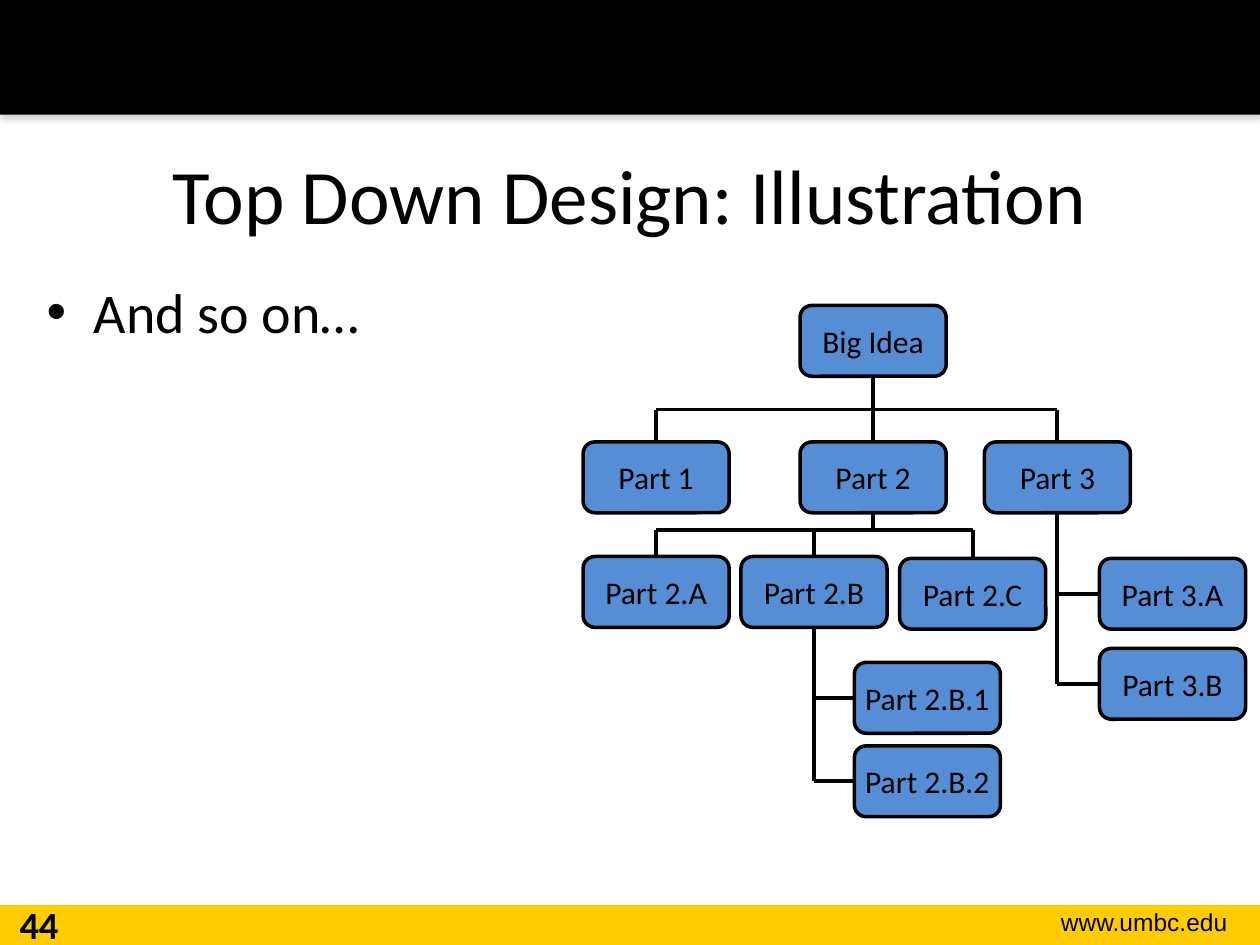
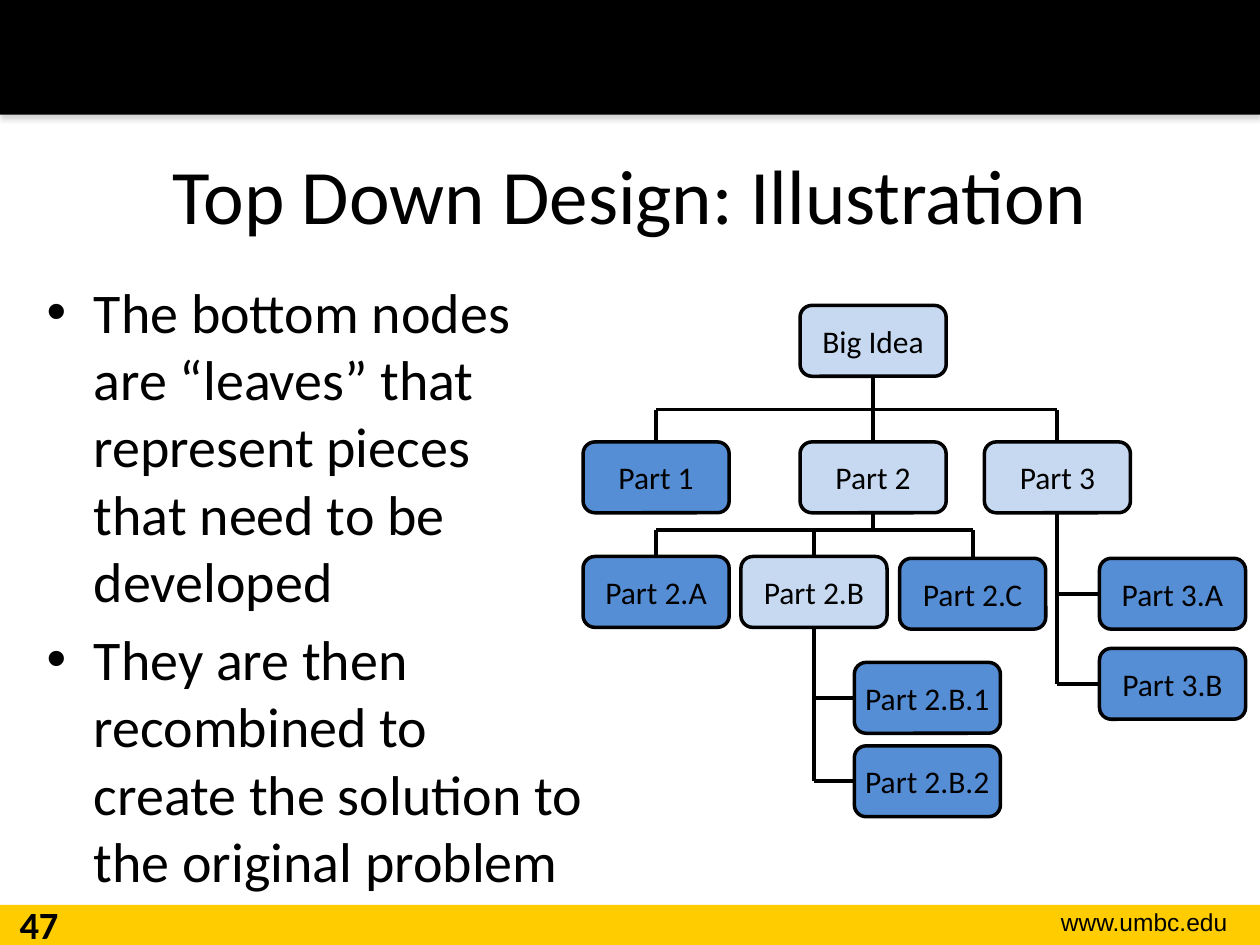
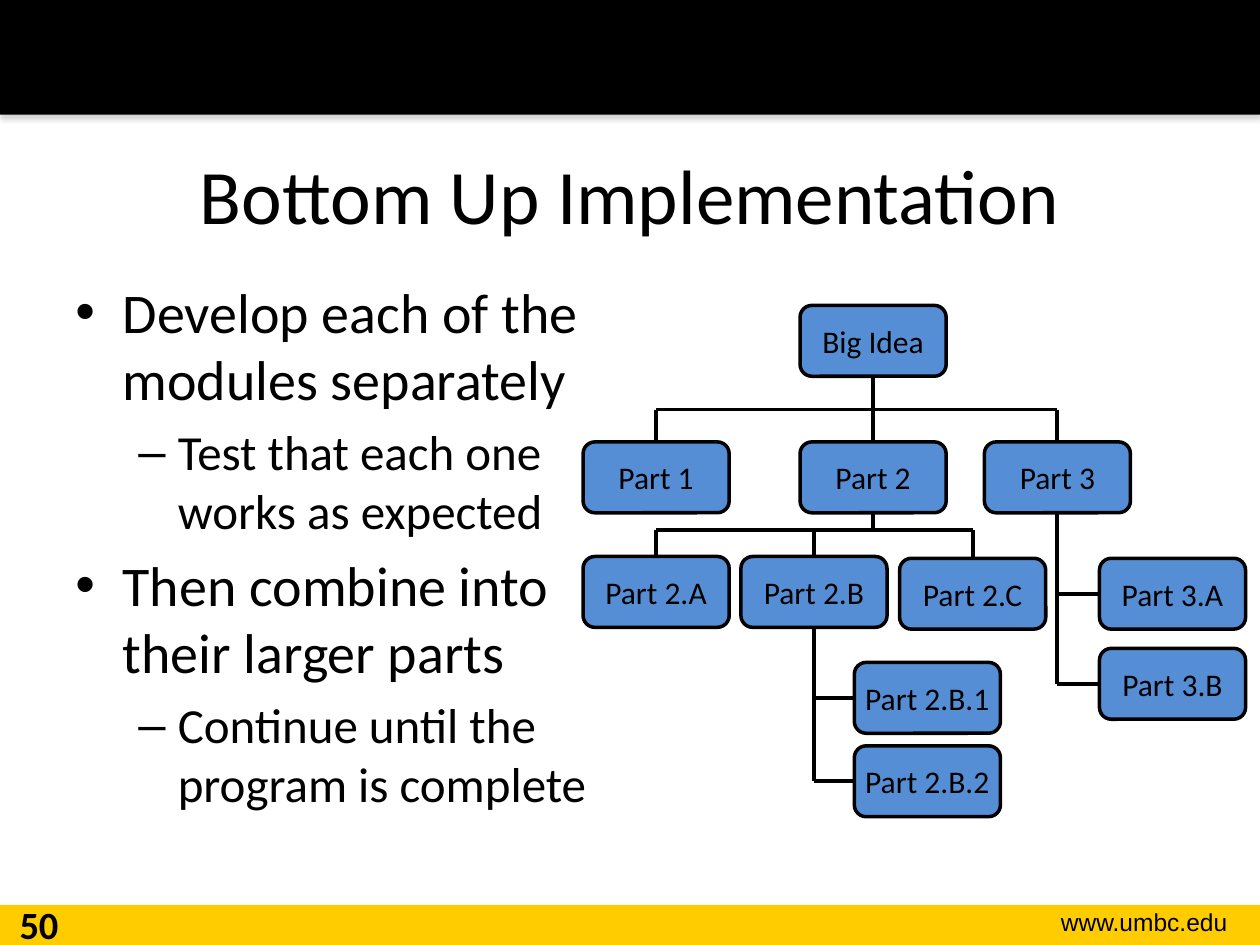
"""Build three slides on top down design and bottom up implementation."""
from lxml import etree
from pptx import Presentation
from pptx.dml.color import RGBColor
from pptx.enum.shapes import MSO_CONNECTOR, MSO_SHAPE
from pptx.enum.text import MSO_ANCHOR, PP_ALIGN
from pptx.oxml import parse_xml
from pptx.oxml.ns import nsdecls, qn
from pptx.util import Pt

LEFT, CENTER, RIGHT = PP_ALIGN.LEFT, PP_ALIGN.CENTER, PP_ALIGN.RIGHT
TOP, MIDDLE = MSO_ANCHOR.TOP, MSO_ANCHOR.MIDDLE
RECT, ROUND = MSO_SHAPE.RECTANGLE, MSO_SHAPE.ROUNDED_RECTANGLE
STRAIGHT = MSO_CONNECTOR.STRAIGHT

BLACK, GOLD, BLUE, PALE = "000000", "FFCC00", "558ED5", "C6D9F1"
SHADOW = (
    f'<a:outerShdw {nsdecls("a")} blurRad="{Pt(3.1)}" dist="{Pt(1.8)}" dir="5400000">'
    '<a:srgbClr val="808080"><a:alpha val="35000"/></a:srgbClr></a:outerShdw>'
)
LEVELS = [(32, 27, 27, "•"), (28, 58.5, 22.5, "–")]

WIDE, HIGH = 83.5, 40.5
NODES = {
    "Big Idea": (457.2, 174.5),
    "Part 1": (333.2, 252.5),
    "Part 2": (457.2, 252.5),
    "Part 3": (562.5, 252.5),
    "Part 2.A": (333.2, 318),
    "Part 2.B": (423.4, 318),
    "Part 2.C": (514.1, 319),
    "Part 3.A": (628.3, 319),
    "Part 3.B": (628.3, 370.5),
    "Part 2.B.1": (488.2, 378.5),
    "Part 2.B.2": (488.2, 426.2),
}
ROWS = [
    ("Big Idea", 234, ["Part 1", "Part 2", "Part 3"]),
    ("Part 2", 303, ["Part 2.A", "Part 2.B", "Part 2.C"]),
]
STACKS = [
    ("Part 3", ["Part 3.A", "Part 3.B"]),
    ("Part 2.B", ["Part 2.B.1", "Part 2.B.2"]),
]
INNER = ["Big Idea", "Part 2", "Part 3", "Part 2.B"]

SLIDES = [
    ("44", "Top Down Design: Illustration", 19.5, 312, [], [(0, "And so on…")]),
    ("47", "Top Down Design: Illustration", 19.5, 325, INNER, [
        (0, "The bottom nodes are “leaves” that represent pieces \vthat need to be developed"),
        (0, "They are then recombined to \vcreate the solution to the original problem"),
    ]),
    ("50", "Bottom Up Implementation", 36, 312, [], [
        (0, "Develop each of the modules separately"),
        (1, "Test that each one works as expected"),
        (0, "Then combine into their larger parts"),
        (1, "Continue until the program is complete"),
    ]),
]


def hue(code):
    return RGBColor.from_string(code)


def write(frame, text, size=18, face="Calibri", bold=False, align=CENTER,
          anchor=TOP, wrap=True, level=None):
    frame.word_wrap = wrap
    frame.vertical_anchor = anchor
    par = frame.paragraphs[0]
    if par.runs:
        par = frame.add_paragraph()
        par.space_before = Pt(size * 0.2)
    par.alignment = align
    if level is not None:
        indent, hang, mark = LEVELS[level][1:]
        props = par._p.get_or_add_pPr()
        props.set("marL", str(Pt(indent)))
        props.set("indent", str(-Pt(hang)))
        etree.SubElement(props, qn("a:buFont")).set("typeface", "Arial")
        etree.SubElement(props, qn("a:buChar")).set("char", mark)
    par.text = text
    for run in par.runs:
        run.font.size = Pt(size)
        run.font.name = face
        run.font.bold = bold
        run.font.color.rgb = hue(BLACK)


lines = []
for name, bus, kids in ROWS:
    x, y = NODES[name]
    mid = x + WIDE / 2
    ends = [NODES[kid][0] + WIDE / 2 for kid in kids]
    lines.append((mid, y + HIGH, mid, bus))
    lines.append((ends[0], bus, ends[-1], bus))
    for kid, end in zip(kids, ends):
        lines.append((end, bus, end, NODES[kid][1]))
for name, kids in STACKS:
    x, y = NODES[name]
    mid = x + WIDE / 2
    lines.append((mid, y + HIGH, mid, NODES[kids[-1]][1] + HIGH / 2))
    for kid in kids:
        side, top = NODES[kid]
        lines.append((mid, top + HIGH / 2, side, top + HIGH / 2))

deck = Presentation()
deck.slide_width, deck.slide_height = Pt(720), Pt(540)

for page, title, left, width, faded, points in SLIDES:
    shapes = deck.slides.add_slide(deck.slide_layouts[6]).shapes

    for top, tall, tint in [(517, 23, GOLD), (0, 65.5, BLACK)]:
        band = shapes.add_shape(RECT, 0, Pt(top), Pt(720), Pt(tall))
        band.shadow.inherit = False
        band.fill.solid()
        band.fill.fore_color.rgb = hue(tint)
        band.line.fill.background()
    band._element.spPr.find(qn("a:effectLst")).append(parse_xml(SHADOW))

    site = shapes.add_textbox(Pt(565.2), Pt(514.8), Pt(143.3), Pt(24.5))
    write(site.text_frame, "www.umbc.edu", size=14, face="Arial", align=RIGHT)
    head = shapes.add_textbox(Pt(36), Pt(65.5), Pt(648), Pt(90))
    write(head.text_frame, title, size=44, anchor=MIDDLE)
    body = shapes.add_textbox(Pt(left), Pt(155), Pt(width), Pt(327.5))
    for level, text in points:
        write(body.text_frame, text, size=LEVELS[level][0], align=LEFT, level=level)
    count = shapes.add_textbox(0, Pt(511.2), Pt(44.6), Pt(28.8))
    write(count.text_frame, page, size=22, bold=True)

    for ends in lines:
        link = shapes.add_connector(STRAIGHT, *[Pt(end) for end in ends])
        link.line.color.rgb = hue(BLACK)
        link.line.width = Pt(2.25)
        etree.SubElement(link._element.spPr, qn("a:effectLst"))

    for name, (x, y) in NODES.items():
        node = shapes.add_shape(ROUND, Pt(x), Pt(y), Pt(WIDE), Pt(HIGH))
        node.shadow.inherit = False
        node.fill.solid()
        node.fill.fore_color.rgb = hue(PALE if name in faded else BLUE)
        node.line.color.rgb = hue(BLACK)
        node.line.width = Pt(2)
        write(node.text_frame, name, anchor=MIDDLE, wrap=name.count(".") < 2)

deck.save("out.pptx")
